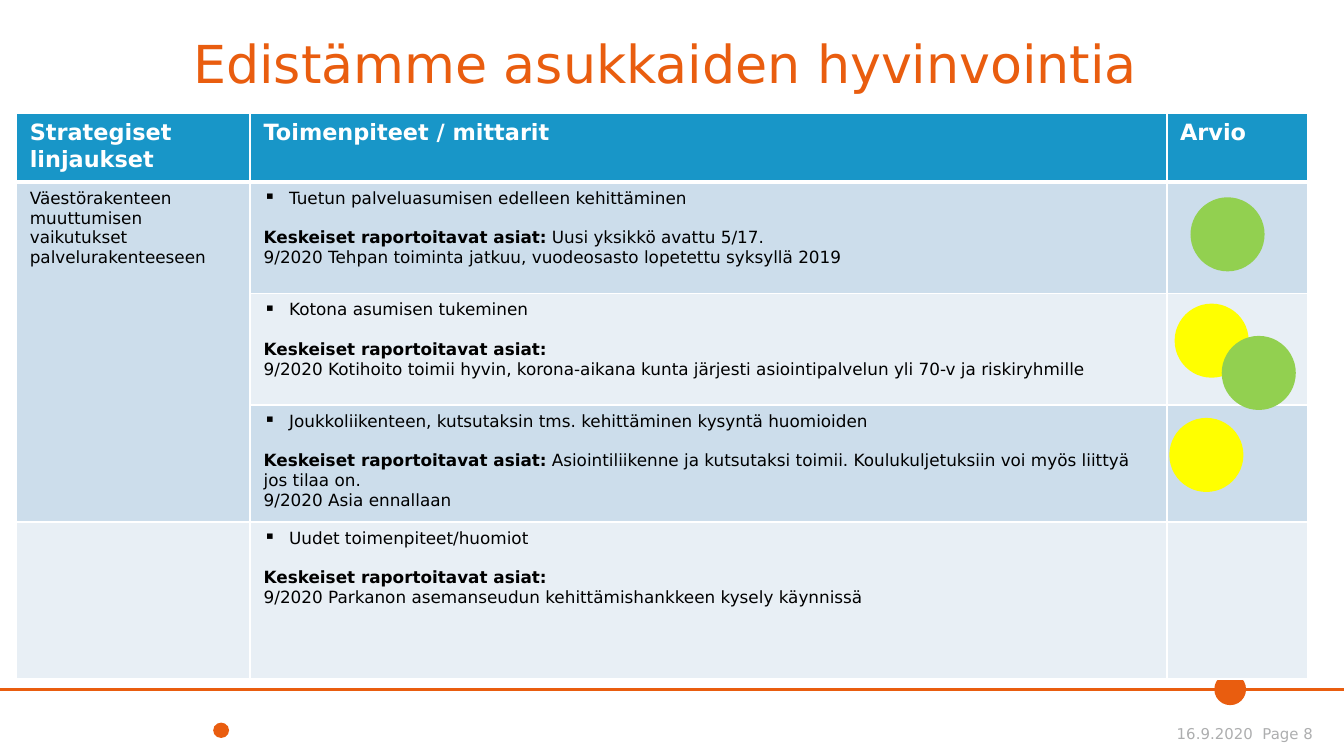
from lxml import etree
from pptx import Presentation
from pptx.dml.color import RGBColor
from pptx.enum.shapes import MSO_CONNECTOR, MSO_SHAPE
from pptx.enum.text import MSO_ANCHOR, PP_ALIGN
from pptx.oxml.ns import qn
from pptx.util import Cm, Pt

STRAIGHT = MSO_CONNECTOR.STRAIGHT
OVAL = MSO_SHAPE.OVAL
BOTTOM = MSO_ANCHOR.BOTTOM
CENTER, RIGHT = PP_ALIGN.CENTER, PP_ALIGN.RIGHT
FONT = "DejaVu Sans"
COLORS = {
    "orange": "E95D0F", "gray": "ADAEAF", "white": "FFFFFF", "black": "000000",
    "header": "1896C8", "dark_band": "CCDDEB", "light_band": "E8EFF5",
    "green": "92D050", "yellow": "FFFF00",
}
HEADERS = ["Strategiset linjaukset", "Toimenpiteet / mittarit", "Arvio"]
GUIDELINE = "Väestörakenteen muuttumisen vaikutukset palvelurakenteeseen"
REPORT_LABEL = "Keskeiset raportoitavat asiat:"
ACTIONS = [
    ("Tuetun palveluasumisen edelleen kehittäminen", "Uusi yksikkö avattu 5/17.",
     "9/2020 Tehpan toiminta jatkuu, vuodeosasto lopetettu syksyllä 2019"),
    ("Kotona asumisen tukeminen", "",
     "9/2020 Kotihoito toimii hyvin, korona-aikana kunta järjesti "
     "asiointipalvelun yli 70-v ja riskiryhmille"),
    ("Joukkoliikenteen, kutsutaksin tms. kehittäminen kysyntä huomioiden",
     "Asiointiliikenne ja kutsutaksi toimii. Koulukuljetuksiin voi myös liittyä jos tilaa on.",
     "9/2020 Asia ennallaan"),
    ("Uudet toimenpiteet/huomiot", "",
     "9/2020 Parkanon asemanseudun kehittämishankkeen kysely käynnissä"),
]
COLUMN_WIDTHS = [4.42, 17.32, 2.67]
ROW_HEIGHTS = [1.3, 2.11, 2.11, 2.21, 2.97]
RATINGS = [(22.5, 3.73, "green"), (22.2, 5.74, "yellow"),
           (23.09, 6.35, "green"), (22.1, 7.9, "yellow")]
RATING_SIZE = 1.4


class SlidePainter:
    """Draws styled elements on the current slide."""

    def __init__(self, page):
        self.page = page

    def color(self, name):
        return RGBColor.from_string(COLORS[name])

    def style(self, para, size, color, bold=False):
        for span in para.runs:
            span.font.name = FONT
            span.font.size = Pt(size)
            span.font.bold = bold
            span.font.color.rgb = self.color(color)

    def text(self, left, top, width, height, text, size, color, align, spacing=1.0):
        box = self.page.shapes.add_textbox(Cm(left), Cm(top), Cm(width), Cm(height))
        frame = box.text_frame
        frame.word_wrap = True
        frame.vertical_anchor = BOTTOM
        frame.margin_left = frame.margin_right = 0
        frame.margin_top = frame.margin_bottom = 0
        frame.text = text
        para = frame.paragraphs[0]
        para.alignment = align
        para.line_spacing = spacing
        self.style(para, size, color)

    def line(self, left, top, right, color, weight):
        rule = self.page.shapes.add_connector(STRAIGHT, Cm(left), Cm(top), Cm(right), Cm(top))
        rule.line.color.rgb = self.color(color)
        rule.line.width = Pt(weight)
        etree.SubElement(rule._element.spPr, qn("a:effectLst"))

    def circle(self, left, top, width, height, color):
        dot = self.page.shapes.add_shape(OVAL, Cm(left), Cm(top), Cm(width), Cm(height))
        dot.shadow.inherit = False
        dot.fill.solid()
        dot.fill.fore_color.rgb = self.color(color)
        dot.line.fill.background()

    def table(self, left, top, widths, heights):
        frame = self.page.shapes.add_table(
            len(heights), len(widths), Cm(left), Cm(top), Cm(sum(widths)), Cm(sum(heights)))
        grid = frame.table
        for column, width in zip(grid.columns, widths):
            column.width = Cm(width)
        for row, height in zip(grid.rows, heights):
            row.height = Cm(height)
        return grid

    def cell(self, cell, fill, top_border=1, bottom_border=1):
        properties = cell._tc.get_or_add_tcPr()
        sides = {"L": 1, "R": 1, "T": top_border, "B": bottom_border}
        for side, weight in sides.items():
            border = etree.SubElement(properties, qn(f"a:ln{side}"), w=str(Pt(weight)))
            solid = etree.SubElement(border, qn("a:solidFill"))
            etree.SubElement(solid, qn("a:srgbClr"), val=COLORS["white"])
        cell.fill.solid()
        cell.fill.fore_color.rgb = self.color(fill)

    def cell_text(self, cell, text, size, color, bold=False):
        cell.text_frame.text = text
        self.style(cell.text_frame.paragraphs[0], size, color, bold)

    def action(self, cell, heading, report, update):
        frame = cell.text_frame
        frame.text = heading
        bullet = frame.paragraphs[0]
        properties = bullet._p.get_or_add_pPr()
        properties.set("marL", str(Cm(0.48)))
        properties.set("indent", str(Cm(-0.48)))
        etree.SubElement(properties, qn("a:buChar"), char="▪")
        label = frame.add_paragraph()
        label.text = REPORT_LABEL
        label.space_before = Pt(10.5)
        if report:
            label.add_run().text = " " + report
        latest = frame.add_paragraph()
        latest.text = update
        for para in frame.paragraphs:
            self.style(para, 9, "black")
        label.runs[0].font.bold = True


def main():
    deck = Presentation()
    deck.slide_width, deck.slide_height = Cm(25.4), Cm(14.29)
    painter = SlidePainter(deck.slides.add_slide(deck.slide_layouts[6]))

    painter.line(0, 13.03, 25.4, "orange", 1.5)
    painter.text(15.98, 13.54, 8.84, 0.5, "16.9.2020  Page 8", 8, "gray", RIGHT)
    painter.circle(22.95, 12.73, 0.6, 0.6, "orange")
    painter.circle(4.03, 13.66, 0.3, 0.29, "orange")
    painter.text(1.09, 0.1, 22.96, 1.7, "Edistämme asukkaiden hyvinvointia",
                 28, "orange", CENTER, 0.9)

    grid = painter.table(0.31, 2.14, COLUMN_WIDTHS, ROW_HEIGHTS)
    for column, header in enumerate(HEADERS):
        painter.cell(grid.cell(0, column), "header", bottom_border=3)
        painter.cell_text(grid.cell(0, column), header, 12, "white", True)
    for row, action in enumerate(ACTIONS, start=1):
        band = "dark_band" if row % 2 else "light_band"
        for column in range(len(HEADERS)):
            painter.cell(grid.cell(row, column), band, top_border=3 if row == 1 else 1)
        painter.action(grid.cell(row, 1), *action)
    grid.cell(1, 0).merge(grid.cell(3, 0))
    painter.cell_text(grid.cell(1, 0), GUIDELINE, 9, "black")

    for left, top, color in RATINGS:
        painter.circle(left, top, RATING_SIZE, RATING_SIZE, color)
    deck.save("out.pptx")


if __name__ == "__main__":
    main()
